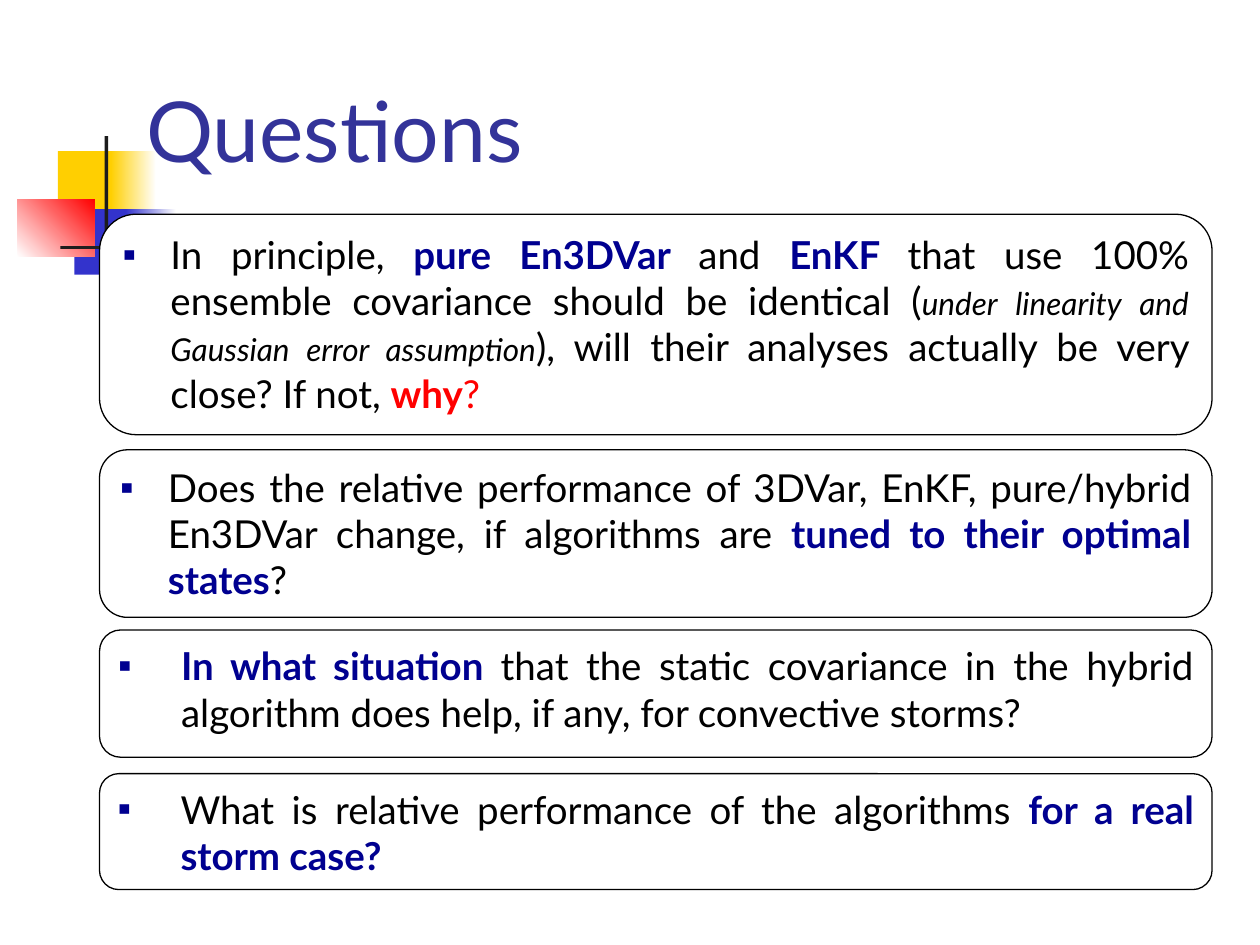
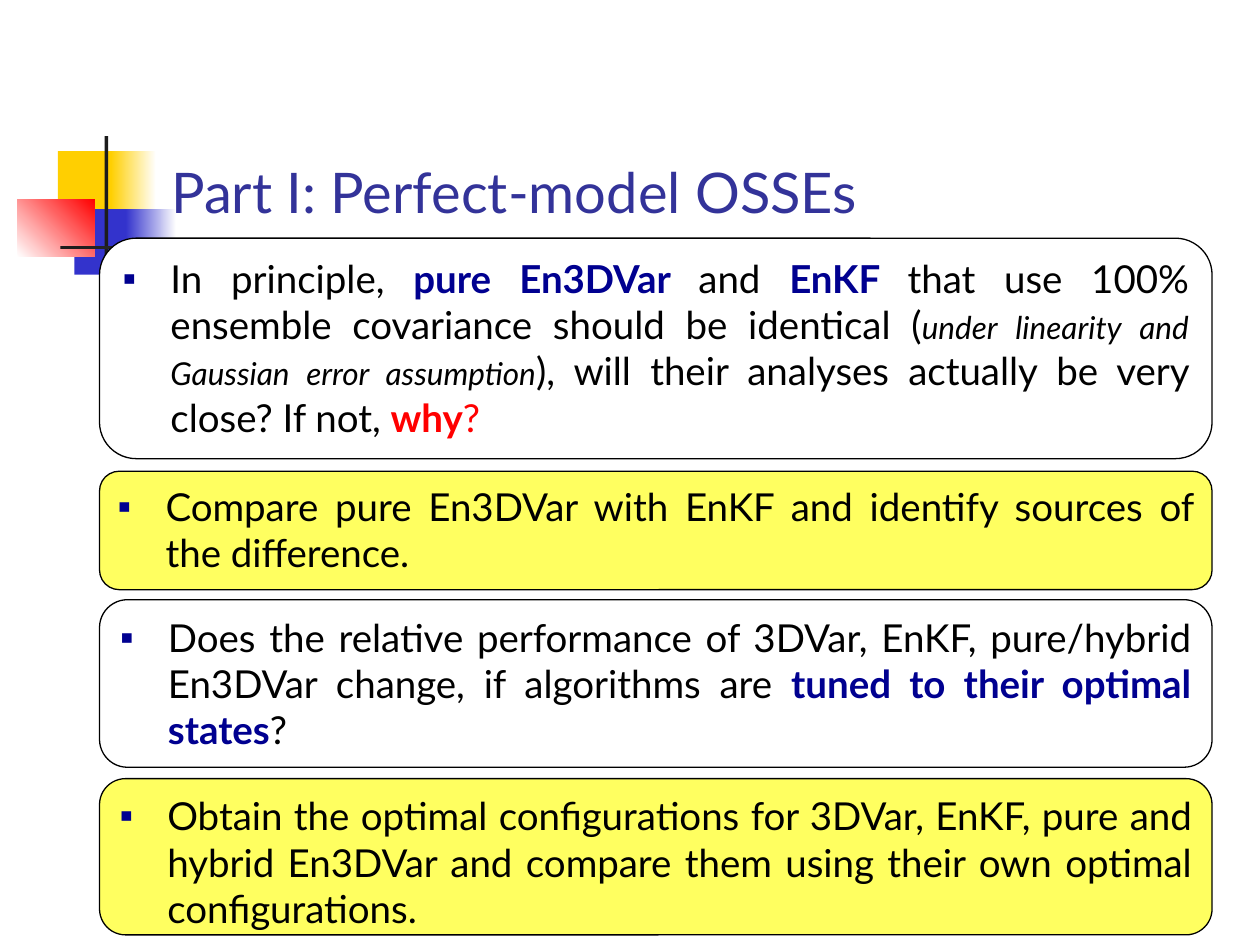
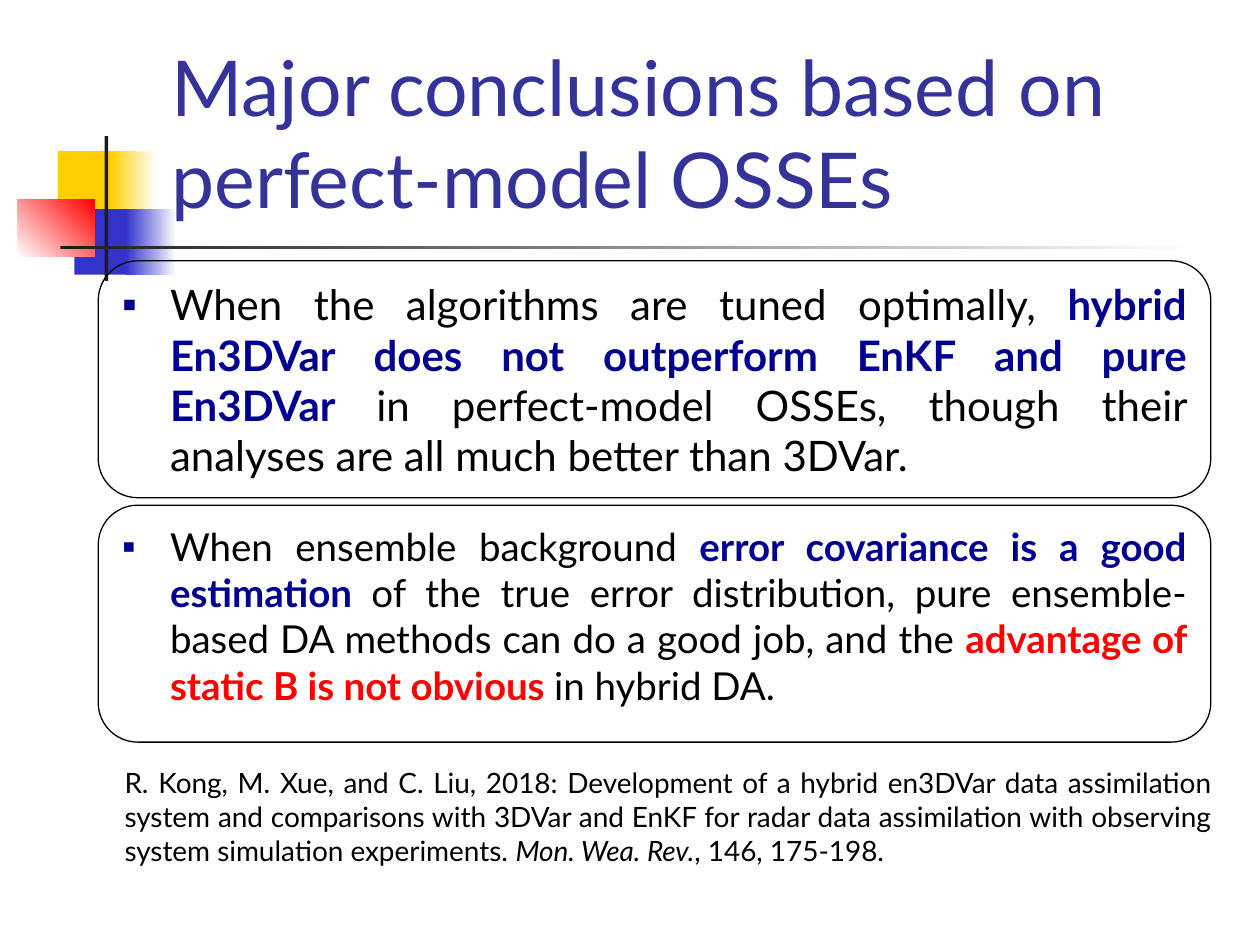
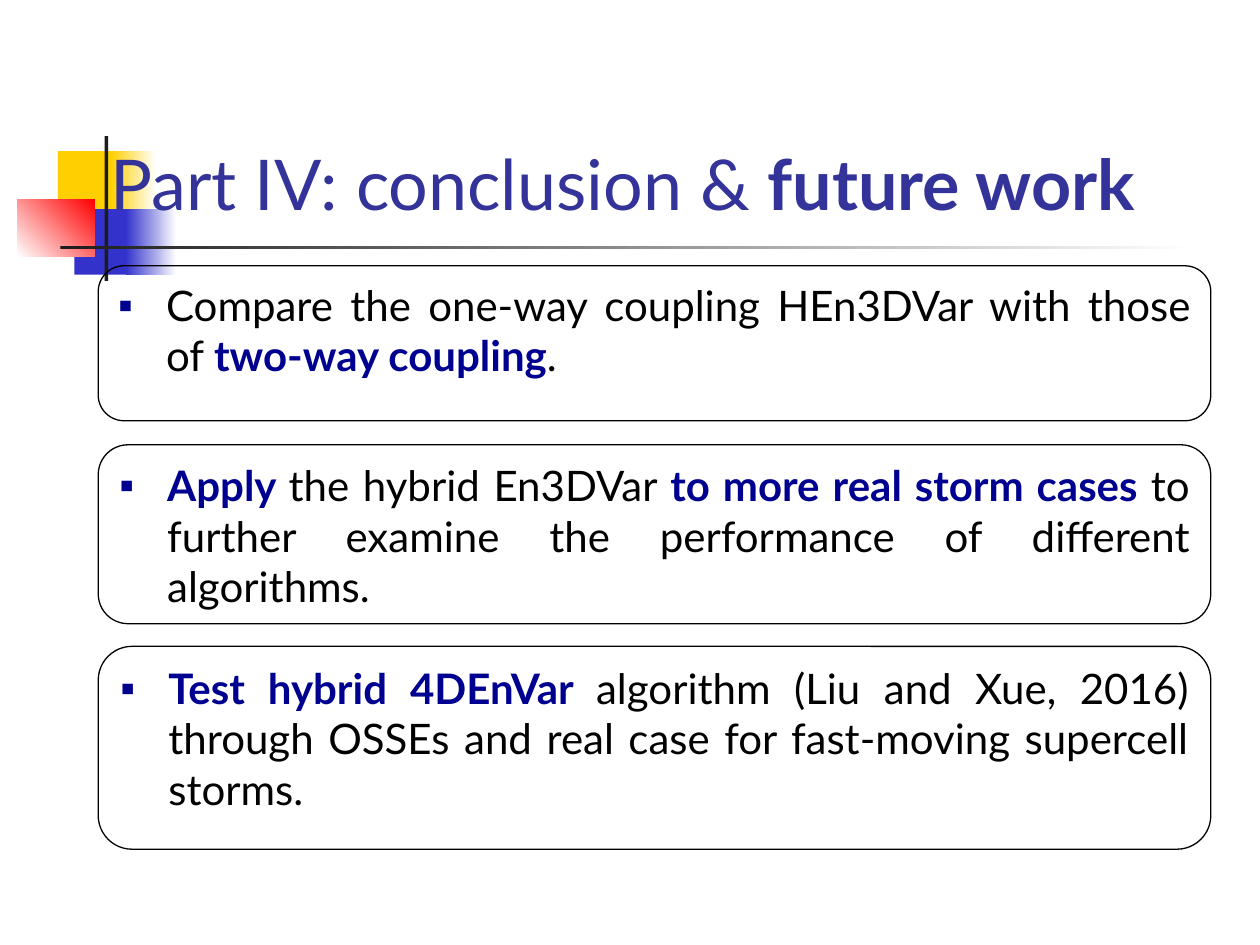
from lxml.etree import SubElement
from pptx import Presentation
from pptx.dml.color import RGBColor
from pptx.enum.shapes import MSO_SHAPE
from pptx.enum.text import MSO_ANCHOR, MSO_AUTO_SIZE, PP_ALIGN
from pptx.oxml.ns import qn
from pptx.util import Inches, Pt

FONT = "Lato"
BLACK = RGBColor(0x00, 0x00, 0x00)
WHITE = RGBColor(0xFF, 0xFF, 0xFF)
NAVY = RGBColor(0x00, 0x00, 0x90)
RED = RGBColor(0xFF, 0x00, 0x00)
INDIGO = RGBColor(0x33, 0x33, 0x99)
BLUE = RGBColor(0x33, 0x33, 0xCC)
GOLD = RGBColor(0xFF, 0xCF, 0x01)
CHARCOAL = RGBColor(0x1C, 0x1C, 0x1C)
YELLOW = RGBColor(0xFF, 0xFF, 0x60)

# Run styles: colour, bold, italic, size change in points
STYLES = {
    "plain": (BLACK, False, False, 0),
    "key": (NAVY, True, False, 0),
    "alert": (RED, True, False, 0),
    "alert mark": (RED, False, False, 0),
    "aside": (BLACK, False, True, -4),
    "journal": (BLACK, False, True, 0),
    "title": (INDIGO, False, False, 0),
    "title bold": (INDIGO, True, False, 0),
}

# Master decoration: left, top, width, height, colours, gradient angle
DECORATION = [
    (0.46, 1.2, 0.48, 0.52, [GOLD], 0),
    (0.88, 1.2, 0.36, 0.52, [GOLD, WHITE], 0),
    (0.59, 1.66, 0.46, 0.52, [BLUE], 0),
    (1, 1.66, 0.4, 0.52, [BLUE, WHITE], 0),
    (0.14, 1.58, 0.61, 0.46, [WHITE, RED], 45),
    (0.83, 1.08, 0.03, 1.15, [CHARCOAL], 0),
    (0.48, 1.95, 9, 0.03, [CHARCOAL, WHITE], 0),
]

# Questions asked on more than one slide
PRINCIPLE = [
    ("In principle, ", "plain"),
    ("pure En3DVar ", "key"),
    ("and ", "plain"),
    ("EnKF ", "key"),
    ("that use 100% ensemble covariance should be identical (", "plain"),
    ("under linearity and Gaussian error assumption", "aside"),
    ("), will their analyses actually be very close? If not, ", "plain"),
    ("why", "alert"),
    ("?", "alert mark"),
]
TUNED = [
    ("Does the relative performance of 3DVar, EnKF, pure/hybrid En3DVar change, "
     "if algorithms are ", "plain"),
    ("tuned to their optimal states", "key"),
    ("?", "plain"),
]

# Cards: top, height, fill, indent, text size, runs
SLIDES = [
    {
        "title": [("Questions", "title")],
        "title_size": 48,
        "title_place": (1.06, 0.46, 8.52, 1.01),
        "card_left": 0.79,
        "cards": [
            (1.7, 1.75, WHITE, 0.38, 22, PRINCIPLE),
            (3.57, 1.33, WHITE, 0.38, 22, TUNED),
            (5, 1.01, None, 0.5, 22, [
                ("In what situation ", "key"),
                ("that the static covariance in the hybrid algorithm does help, "
                 "if any, for convective storms?", "plain")]),
            (6.14, 0.92, None, 0.5, 22, [
                ("What is relative performance of the algorithms ", "plain"),
                ("for a real storm case?", "key")]),
        ],
    },
    {
        "title": [("Part I: Perfect-model OSSEs", "title")],
        "title_size": 32,
        "title_place": (1.26, 0.23, 8.52, 1.6),
        "card_left": 0.79,
        "cards": [
            (1.89, 1.75, WHITE, 0.38, 22, PRINCIPLE),
            (3.74, 0.94, YELLOW, 0.38, 22, [
                ("Compare pure En3DVar with EnKF and identify sources of the "
                 "difference.", "plain")]),
            (4.76, 1.33, WHITE, 0.38, 22, TUNED),
            (6.18, 1.24, YELLOW, 0.38, 22, [
                ("Obtain the optimal configurations for 3DVar, EnKF, pure and "
                 "hybrid En3DVar and compare them using their own optimal "
                 "configurations.", "plain")]),
        ],
    },
    {
        "title": [("Major conclusions based on perfect-model OSSEs", "title")],
        "title_size": 44,
        "title_place": (1.26, 0.23, 8.52, 1.6),
        "card_left": 0.78,
        "cards": [
            (2.07, 1.88, None, 0.38, 24, [
                ("When the algorithms are tuned optimally, ", "plain"),
                ("hybrid En3DVar does not outperform EnKF and pure En3DVar ", "key"),
                ("in perfect-model OSSEs, though their analyses are all much "
                 "better than 3DVar. ", "plain")]),
            (4.01, 1.88, None, 0.38, 22, [
                ("When ensemble background ", "plain"),
                ("error covariance is a good estimation ", "key"),
                ("of the true error distribution, pure ensemble-based DA methods "
                 "can do a good job, and the ", "plain"),
                ("advantage of static B is not obvious ", "alert"),
                ("in hybrid DA. ", "plain")]),
        ],
        "citation": [
            ("R. Kong, M. Xue, and C. Liu, 2018: Development of a hybrid en3DVar "
             "data assimilation system and comparisons with 3DVar and EnKF for "
             "radar data assimilation with observing system simulation "
             "experiments. ", "plain"),
            ("Mon. Wea. Rev.", "journal"),
            (", 146, 175-198.", "plain"),
        ],
    },
    {
        "title": [("Part IV: conclusion & ", "title"), ("future work", "title bold")],
        "title_size": 40,
        "title_place": (0.78, 0.23, 9, 1.6),
        "card_left": 0.78,
        "cards": [
            (2.11, 1.23, None, 0.38, 24, [
                ("Compare the one-way coupling HEn3DVar with those of ", "plain"),
                ("two-way coupling", "key"),
                (".", "plain")]),
            (3.53, 1.42, None, 0.38, 24, [
                ("Apply ", "key"),
                ("the hybrid En3DVar ", "plain"),
                ("to more real storm cases ", "key"),
                ("to further examine the performance of different algorithms.",
                 "plain")]),
            (5.13, 1.61, None, 0.38, 24, [
                ("Test hybrid 4DEnVar ", "key"),
                ("algorithm (Liu and Xue, 2016) through OSSEs and real case for "
                 "fast-moving supercell storms.", "plain")]),
        ],
    },
]
CARD_WIDTH = 8.83
CITATION_PLACE = (0.89, 6.03, CARD_WIDTH, 0.91)


def inches(values):
    return [Inches(value) for value in values]


def write_runs(para, runs, size):
    for words, style in runs:
        span = para.add_run()
        span.text = words
        color, bold, italic, change = STYLES[style]
        span.font.name = FONT
        span.font.size = Pt(size + change)
        span.font.color.rgb = color
        span.font.bold = bold
        span.font.italic = italic


def add_bullet(para, indent):
    properties = para._p.get_or_add_pPr()
    properties.set("marL", str(Inches(indent)))
    properties.set("indent", str(-Inches(indent)))
    color = SubElement(properties, qn("a:buClr"))
    SubElement(color, qn("a:srgbClr"), val=str(NAVY))
    SubElement(properties, qn("a:buFont"), typeface="Arial")
    SubElement(properties, qn("a:buChar"), char="▪")


def decorate_master(deck, page):
    """Draw the coloured squares and rules, then move them behind every slide."""
    tree = deck.slide_master.shapes.element
    for index, (*place, colors, angle) in enumerate(DECORATION):
        block = page.shapes.add_shape(MSO_SHAPE.RECTANGLE, *inches(place))
        block.shadow.inherit = False
        block.line.fill.background()
        if len(colors) == 1:
            block.fill.solid()
            block.fill.fore_color.rgb = colors[0]
        else:
            block.fill.gradient()
            block.fill.gradient_angle = angle
            for position, (stop, color) in enumerate(
                    zip(block.fill.gradient_stops, colors)):
                stop.position = position
                stop.color.rgb = color
        block.element.nvSpPr.cNvPr.set("id", str(101 + index))
        tree.insert(2 + index, block.element)


def add_title(page, runs, size, place):
    title = page.shapes.title
    title.left, title.top, title.width, title.height = inches(place)
    frame = title.text_frame
    frame.vertical_anchor = MSO_ANCHOR.BOTTOM
    frame.auto_size = MSO_AUTO_SIZE.NONE
    para = frame.paragraphs[0]
    para.alignment = PP_ALIGN.LEFT
    write_runs(para, runs, size)


def add_card(page, left, card):
    top, height, fill, indent, size, runs = card
    box = page.shapes.add_shape(MSO_SHAPE.ROUNDED_RECTANGLE,
                                *inches((left, top, CARD_WIDTH, height)))
    box.shadow.inherit = False
    box.line.color.rgb = BLACK
    box.line.width = Pt(0.75)
    if fill is None:
        box.fill.background()
    else:
        box.fill.solid()
        box.fill.fore_color.rgb = fill
    box.text_frame.word_wrap = True
    box.text_frame.vertical_anchor = MSO_ANCHOR.TOP
    para = box.text_frame.paragraphs[0]
    para.alignment = PP_ALIGN.JUSTIFY
    add_bullet(para, indent)
    write_runs(para, runs, size)


def add_citation(page, runs):
    box = page.shapes.add_textbox(*inches(CITATION_PLACE))
    box.text_frame.word_wrap = True
    box.text_frame.auto_size = MSO_AUTO_SIZE.SHAPE_TO_FIT_TEXT
    para = box.text_frame.paragraphs[0]
    para.alignment = PP_ALIGN.JUSTIFY
    write_runs(para, runs, 16)


def main():
    deck = Presentation()
    deck.slide_width, deck.slide_height = Inches(10), Inches(7.5)
    title_only = deck.slide_layouts[5]
    for number, content in enumerate(SLIDES):
        page = deck.slides.add_slide(title_only)
        if number == 0:
            decorate_master(deck, page)
        add_title(page, content["title"], content["title_size"],
                  content["title_place"])
        for card in content["cards"]:
            add_card(page, content["card_left"], card)
        if "citation" in content:
            add_citation(page, content["citation"])
    deck.save("out.pptx")


if __name__ == "__main__":
    main()
